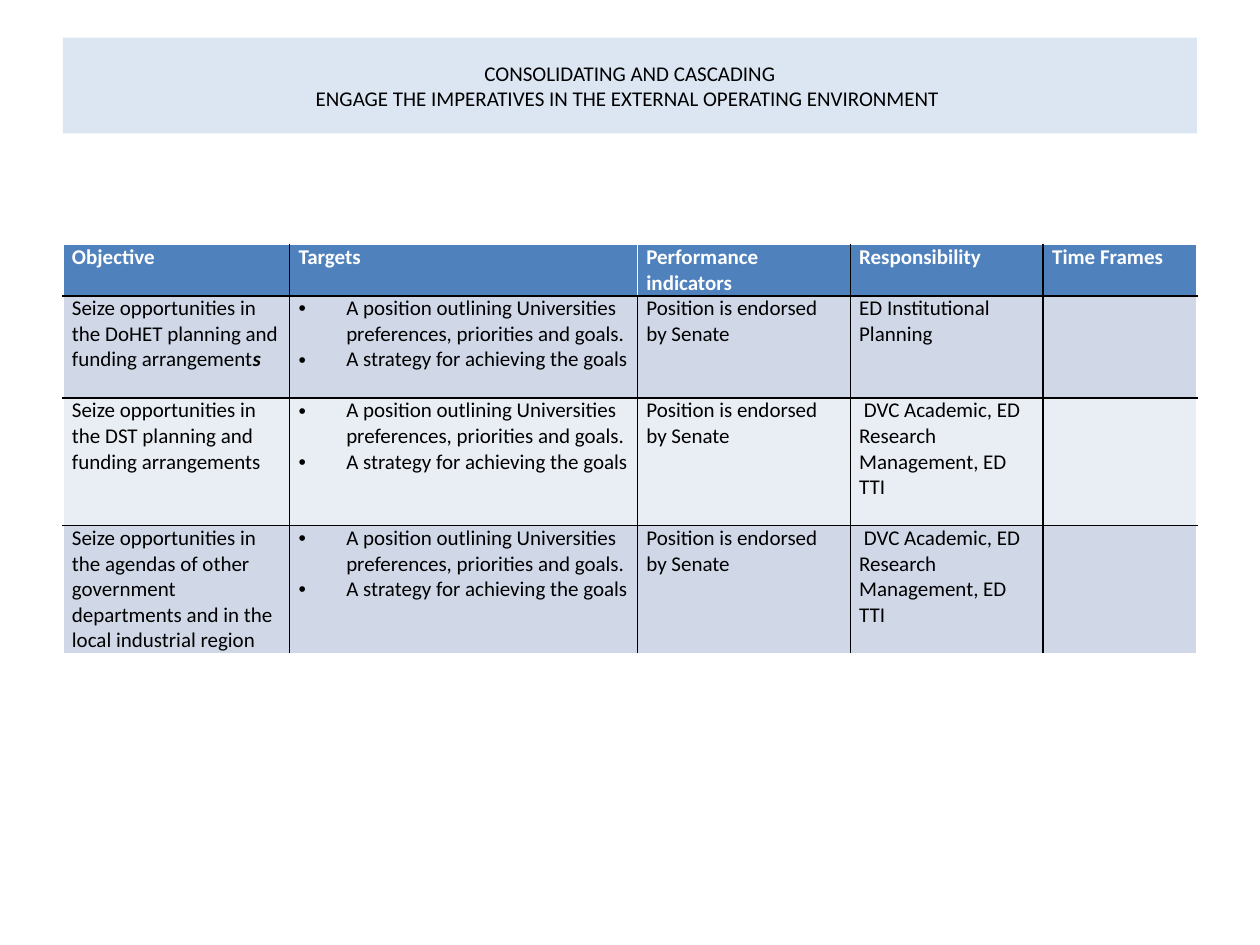
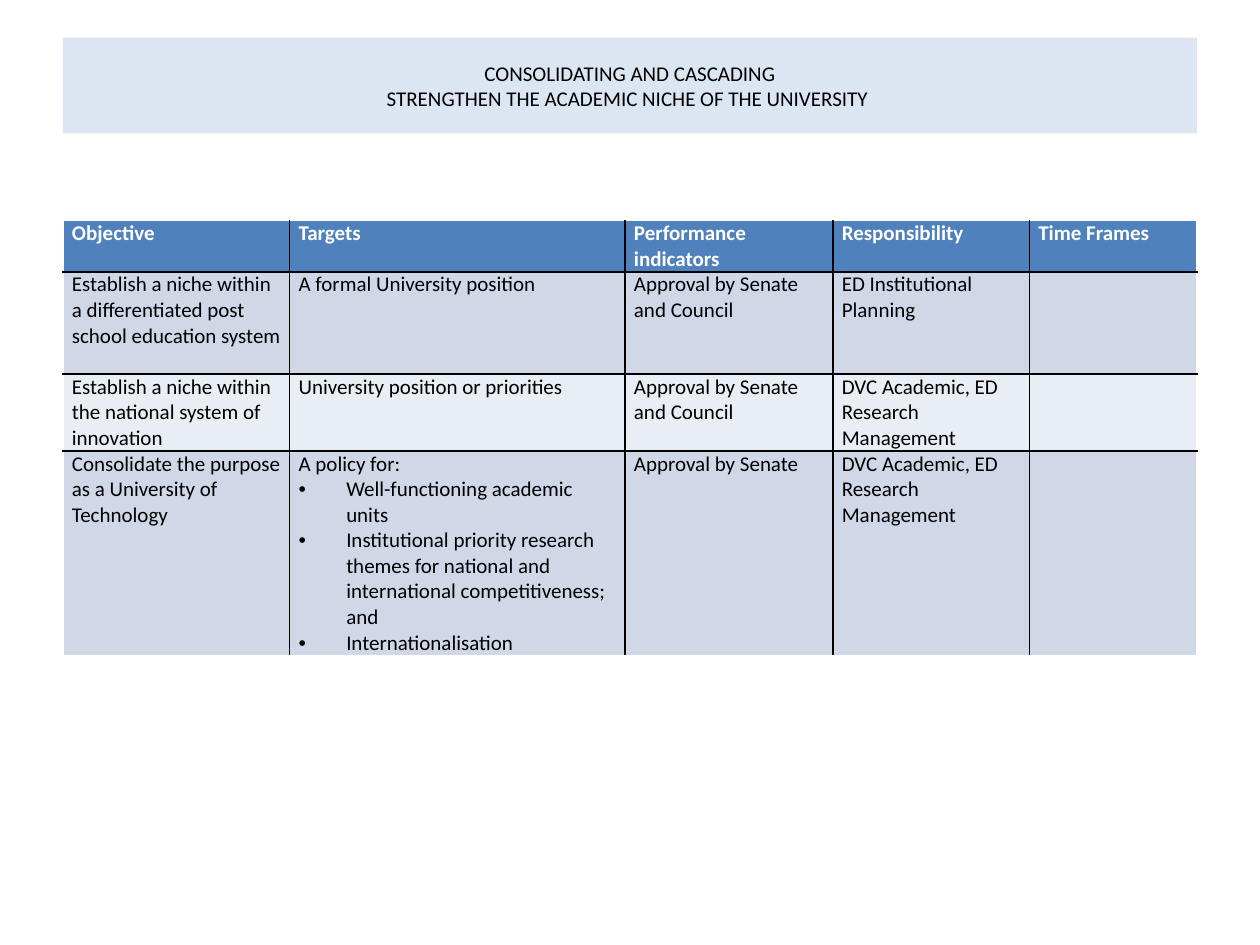
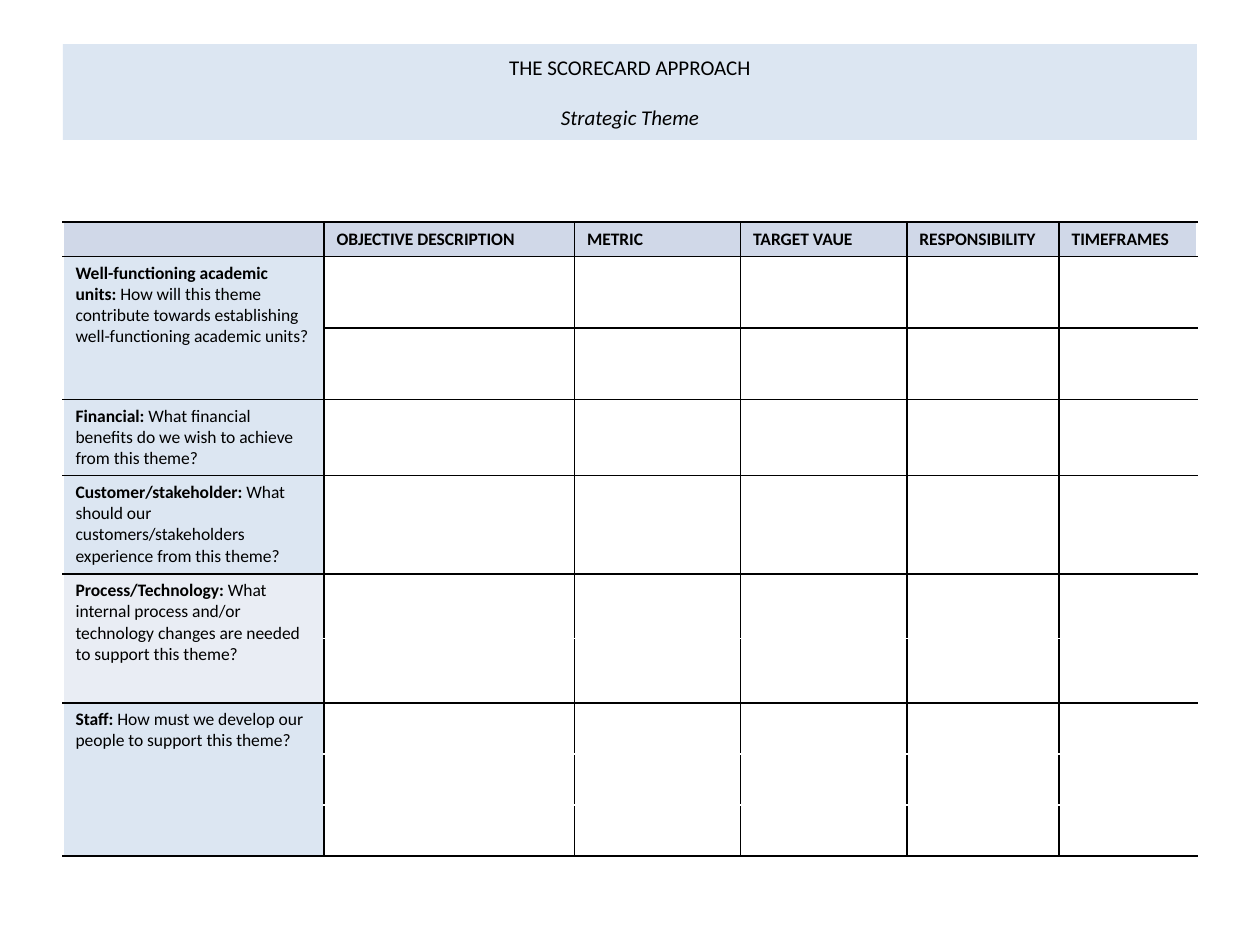
from dataclasses import dataclass

from lxml import etree
from pptx import Presentation
from pptx import util as u
from pptx.dml import color
from pptx.enum import shapes, text
from pptx.oxml import ns


@dataclass(frozen=True)
class Theme:
    font: str = "Calibri"
    body_size: int = 12
    scorecard_size: int = 10
    ink: str = "000000"
    paper: str = "FFFFFF"
    header: str = "4F81BD"
    band_dark: str = "D0D8E8"
    band_light: str = "E9EDF4"
    pale: str = "DCE6F2"
    border_width: int = 1


THEME = Theme()
LEFT, WIDTH = 1.27, 22.86
BULLET = "• "
PLAN_HEADINGS = ["Objective", "Targets", "Performance indicators",
                 "Responsibility", "Time Frames"]


def rgb(value):
    return color.RGBColor.from_string(value)


def set_all(target, values):
    for name, value in values.items():
        setattr(target, name, value)


class Deck:
    """Holds the theme and the current slide."""

    def __init__(self, theme):
        self.theme = theme
        self.file = Presentation()
        set_all(self.file, {"slide_width": u.Cm(25.4), "slide_height": u.Cm(19.05)})
        self.slide = None

    def new_slide(self):
        self.slide = self.file.slides.add_slide(self.file.slide_layouts[6])

    def add_text(self, frame, paragraphs, size, ink=None, bold=False, **paragraph_format):
        """Each paragraph is a string or a list of (text, font values) runs."""
        for index, content in enumerate(paragraphs):
            paragraph = frame.paragraphs[0] if index == 0 else frame.add_paragraph()
            set_all(paragraph, paragraph_format)
            if isinstance(content, str):
                if content.startswith(BULLET):
                    self.bullet(paragraph)
                content = [(content.removeprefix(BULLET), {})]
            for words, changes in content:
                run = paragraph.add_run()
                run.text = words
                set_all(run.font, {"name": self.theme.font, "size": u.Pt(size),
                                   "bold": bold} | changes)
                run.font.color.rgb = rgb(ink or self.theme.ink)

    def bullet(self, paragraph):
        properties = paragraph._p.get_or_add_pPr()
        indent = u.Cm(0.96)
        properties.set("marL", str(indent))
        properties.set("indent", str(-indent))
        etree.SubElement(properties, ns.qn("a:buFont"), typeface="Arial")
        etree.SubElement(properties, ns.qn("a:buChar"), char=BULLET.strip())

    def title(self, lines, top=0.76, gap=0):
        band = self.slide.shapes.add_shape(
            shapes.MSO_SHAPE.RECTANGLE, u.Cm(LEFT), u.Cm(top), u.Cm(WIDTH), u.Cm(1.93))
        band.shadow.inherit = False
        band.fill.solid()
        band.fill.fore_color.rgb = rgb(self.theme.pale)
        band.line.fill.background()
        set_all(band.text_frame, {"word_wrap": True,
                                  "vertical_anchor": text.MSO_ANCHOR.MIDDLE})
        self.add_text(band.text_frame, lines, self.theme.body_size,
                      alignment=text.PP_ALIGN.CENTER)
        band.text_frame.paragraphs[-1].space_before = u.Pt(gap)

    def table(self, top, columns, rows):
        frame = self.slide.shapes.add_table(
            len(rows), len(columns), u.Cm(LEFT), u.Cm(top), u.Cm(WIDTH), u.Cm(sum(rows)))
        grid = frame.table
        set_all(grid, {"first_row": False, "horz_banding": False})
        for column, width in zip(grid.columns, columns):
            column.width = u.Cm(width)
        for row, height in zip(grid.rows, rows):
            row.height = u.Cm(height)
        return grid

    def borders(self, cell, white_sides):
        properties = cell._tc.get_or_add_tcPr()
        for side in "LRTB":
            line = etree.SubElement(properties, ns.qn(f"a:ln{side}"),
                                    w=str(u.Pt(self.theme.border_width)))
            fill = etree.SubElement(line, ns.qn("a:solidFill"))
            shade = self.theme.paper if side in white_sides else self.theme.ink
            etree.SubElement(fill, ns.qn("a:srgbClr"), val=shade)

    def finish_grid(self, grid, size, fills, white_lines, white_edge=None):
        """Draw borders and fills; white_lines counts row edges from the top.
        white_edge is a column edge that is white in the first row only."""
        last = len(grid.columns)
        for r, row in enumerate(grid.rows):
            for c, cell in enumerate(row.cells):
                if not cell.text_frame.text:
                    end = cell.text_frame.paragraphs[0]._p.get_or_add_endParaRPr()
                    end.set("sz", str(size * 100))
                if cell.is_spanned:
                    continue
                height = cell.span_height if cell.is_merge_origin else 1
                width = cell.span_width if cell.is_merge_origin else 1
                edges = {0, last} | ({white_edge} if r == 0 else set())
                tests = {"L": c in edges, "R": c + width in edges,
                         "T": r in white_lines, "B": r + height in white_lines}
                self.borders(cell, {side for side, white in tests.items() if white})
                fill = fills(r, c)
                if fill:
                    cell.fill.solid()
                    cell.fill.fore_color.rgb = rgb(fill)
                else:
                    cell.fill.background()

    def plan(self, top, columns, heights, entries, white_edge=None):
        """Action plan: heading row, then one banded row per objective."""
        theme = self.theme
        grid = self.table(top, columns, heights)
        headings = [[heading] for heading in PLAN_HEADINGS]
        for r, entry in enumerate([headings] + entries):
            for c in range(len(columns)):
                cell = grid.cell(r, c)
                set_all(cell, {"margin_left": u.Cm(0.18), "margin_right": u.Cm(0.18),
                               "margin_top": 0, "margin_bottom": 0})
                if c < len(entry):
                    self.add_text(cell.text_frame, entry[c], theme.body_size,
                                  ink=theme.paper if r == 0 else theme.ink, bold=r == 0)
        bands = [theme.header] + [theme.band_dark, theme.band_light] * len(entries)
        self.finish_grid(grid, theme.body_size, lambda r, c: bands[r],
                         {0, len(heights)}, white_edge)

    def scorecard(self, top, columns, heights, headings, perspectives, white_lines):
        """Perspectives are (first row, row count, fill, name, question)."""
        theme = self.theme
        grid = self.table(top, columns, heights)
        grid.cell(0, 0).merge(grid.cell(0, len(columns) - 1))
        for c, heading in enumerate(headings, start=1):
            self.add_text(grid.cell(1, c).text_frame, [heading],
                          theme.scorecard_size, bold=True)
        label_fills = {}
        for first, count, fill, name, question in perspectives:
            label = grid.cell(first, 0)
            if count > 1:
                label.merge(grid.cell(first + count - 1, 0))
            self.add_text(label.text_frame,
                          [[(name + " ", {"bold": True}), (question, {})]],
                          theme.scorecard_size)
            label_fills[first] = fill

        def fills(r, c):
            if r == 1:
                return theme.band_dark
            return label_fills.get(r) if c == 0 else None

        self.finish_grid(grid, theme.scorecard_size, fills, white_lines)


def main():
    deck = Deck(THEME)

    # External operating environment
    deck.new_slide()
    deck.title(["CONSOLIDATING AND CASCADING",
                "ENGAGE THE IMPERATIVES IN THE EXTERNAL OPERATING ENVIRONMENT "])
    targets = ["• A position outlining Universities preferences, priorities and goals.",
               "• A strategy for achieving the goals"]
    indicator = ["Position is endorsed by Senate"]
    research_team = [" DVC Academic, ED Research Management, ED TTI"]
    deck.plan(4.93, [4.57, 7.01, 4.29, 3.89, 3.1], [1.03, 2.06, 2.57, 2.57], [
        [[[("Seize opportunities in the DoHET planning and funding arrangement", {}),
           ("s", {"bold": True, "italic": True})]],
         targets, indicator, ["ED Institutional Planning"]],
        [["Seize opportunities in the DST planning and funding arrangements"],
         targets, indicator, research_team],
        [["Seize opportunities in the agendas of other government departments "
          "and in the local industrial region"],
         targets, indicator, research_team],
    ], white_edge=2)

    # Academic niche
    deck.new_slide()
    deck.title(["CONSOLIDATING AND CASCADING",
                "STRENGTHEN THE ACADEMIC NICHE OF THE UNIVERSITY "])
    approval = ["Approval by Senate and Council"]
    research_team = ["DVC Academic, ED Research Management"]
    deck.plan(4.45, [4.57, 6.76, 4.19, 3.96, 3.38], [1.03, 2.06, 1.55, 4.12], [
        [["Establish a niche within a differentiated post school education system"],
         ["A formal University position"], approval, ["ED Institutional Planning"]],
        [["Establish a niche within the national system of innovation"],
         ["University position or priorities"], approval, research_team],
        [["Consolidate the purpose as a University of Technology"],
         ["A policy for:",
          "• Well-functioning academic units",
          "• Institutional priority research themes for national and "
          "international competitiveness; and",
          "• Internationalisation"],
         ["Approval by Senate"], research_team],
    ])

    # Scorecard
    deck.new_slide()
    deck.scorecard(
        2.82, [5.26, 5.05, 3.35, 3.35, 3.07, 2.78],
        [1.66, 0.69] + [1.44] * 2 + [1.52, 1.98] + [1.3] * 2 + [1.03] * 3,
        ["OBJECTIVE DESCRIPTION", "METRIC", "TARGET VAUE", "RESPONSIBILITY", "TIMEFRAMES"],
        [
            (2, 2, THEME.pale, "Well-functioning academic units:",
             "How will this theme contribute towards establishing "
             "well-functioning academic units?"),
            (4, 1, THEME.pale, "Financial:",
             "What financial benefits do we wish to achieve from this theme?"),
            (5, 1, THEME.pale, "Customer/stakeholder:",
             "What should our customers/stakeholders experience from this theme?"),
            (6, 2, THEME.band_light, "Process/Technology:",
             "What internal process and/or technology changes are needed "
             "to support this theme?"),
            (8, 3, THEME.pale, "Staff:",
             "How must we develop our people to support this theme?"),
        ],
        white_lines={0, 7, 9, 10})
    deck.title(["THE SCORECARD APPROACH", [("Strategic Theme", {"italic": True})]],
               top=0.89, gap=14)

    deck.file.save("out.pptx")


if __name__ == "__main__":
    main()
